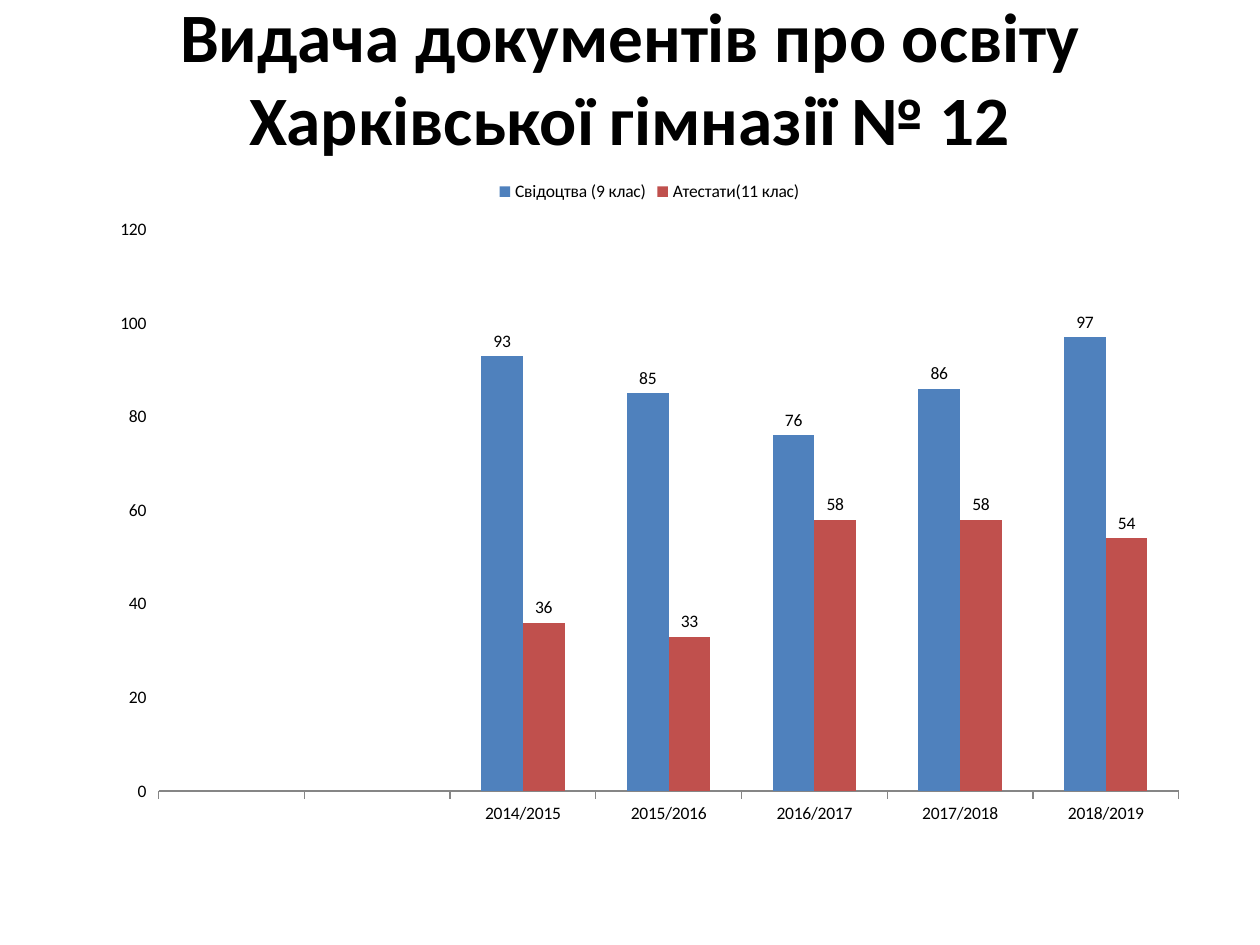
from lxml import etree
from pptx import Presentation
from pptx.chart.data import CategoryChartData
from pptx.dml.color import RGBColor
from pptx.enum.chart import (XL_CHART_TYPE, XL_LABEL_POSITION,
                             XL_LEGEND_POSITION, XL_TICK_MARK)
from pptx.enum.text import MSO_ANCHOR, PP_ALIGN
from pptx.oxml import parse_xml
from pptx.oxml.ns import nsdecls
from pptx.util import Pt

COLUMNS = XL_CHART_TYPE.COLUMN_CLUSTERED
LABELS_ABOVE = XL_LABEL_POSITION.OUTSIDE_END
LEGEND_TOP = XL_LEGEND_POSITION.TOP
TICKS_OUT = XL_TICK_MARK.OUTSIDE
MIDDLE = MSO_ANCHOR.MIDDLE
CENTER = PP_ALIGN.CENTER

FONT = "Calibri"
BLACK, WHITE, AXIS_GREY = "000000", "FFFFFF", "868686"
TITLE = "Видача документів про освіту Харківської гімназії № 12"
YEARS = ["", "", "2014/2015", "2015/2016", "2016/2017", "2017/2018", "2018/2019"]
DOCUMENTS = [
    ("Свідоцтва (9 клас)", "4F81BD", [None, None, 93, 85, 76, 86, 97]),
    ("Атестати(11 клас)", "C0504D", [None, None, 36, 33, 58, 58, 54]),
]


def rgb(hex_color):
    return RGBColor.from_string(hex_color)


def style_font(font, size, bold=False):
    font.name = FONT
    font.size = Pt(size)
    font.bold = bold
    font.color.rgb = rgb(BLACK)


def set_title(slide):
    heading = slide.shapes.title
    heading.left, heading.top = Pt(36), Pt(21.6)
    heading.width, heading.height = Pt(648), Pt(90)
    frame = heading.text_frame
    frame.text = TITLE
    frame.word_wrap = True
    frame.vertical_anchor = MIDDLE
    frame.margin_bottom = Pt(50)
    line = frame.paragraphs[0]
    line.alignment = CENTER
    style_font(line.runs[0].font, 39.6, bold=True)


def format_axes(chart):
    year_axis, count_axis = chart.category_axis, chart.value_axis
    year_axis.major_tick_mark = TICKS_OUT
    year_axis.format.line.color.rgb = rgb(AXIS_GREY)
    year_axis.format.line.width = Pt(0.75)

    count_axis.minimum_scale, count_axis.maximum_scale = 0, 120
    count_axis.major_unit = 20
    count_axis.major_tick_mark = TICKS_OUT
    count_axis.format.line.fill.background()
    count_axis.has_major_gridlines = True
    gridline = count_axis.major_gridlines.format.line
    gridline.color.rgb = rgb(WHITE)
    gridline.width = Pt(0.75)


def fill_plot_area(chart, hex_color):
    plot_area = chart.plots[0]._element.getparent()
    properties = parse_xml(f"<c:spPr {nsdecls('c', 'a')}/>")
    fill = etree.SubElement(properties, properties.nsmap["a"].join("{}") + "solidFill")
    etree.SubElement(fill, properties.nsmap["a"].join("{}") + "srgbClr", val=hex_color)
    plot_area.append(properties)


def add_documents_chart(slide):
    data = CategoryChartData()
    data.categories = YEARS
    for name, _, counts in DOCUMENTS:
        data.add_series(name, counts)
    chart = slide.shapes.add_chart(
        COLUMNS, Pt(56.16), Pt(95.76), Pt(630), Pt(382.32), data).chart
    style_font(chart.font, 10)
    chart.has_title = False
    chart.has_legend = True
    chart.legend.position = LEGEND_TOP
    chart.legend.include_in_layout = False

    columns = chart.plots[0]
    columns.vary_by_categories = False
    columns.gap_width = 150
    columns.overlap = 0
    for series, (_, color, _) in zip(columns.series, DOCUMENTS):
        series.format.fill.solid()
        series.format.fill.fore_color.rgb = rgb(color)
        series.data_labels.show_value = True
        series.data_labels.position = LABELS_ABOVE
    format_axes(chart)
    fill_plot_area(chart, WHITE)


def main():
    deck = Presentation()
    deck.slide_width, deck.slide_height = Pt(720), Pt(540)
    slide = deck.slides.add_slide(deck.slide_layouts[5])
    set_title(slide)
    add_documents_chart(slide)
    deck.save("out.pptx")


if __name__ == "__main__":
    main()
